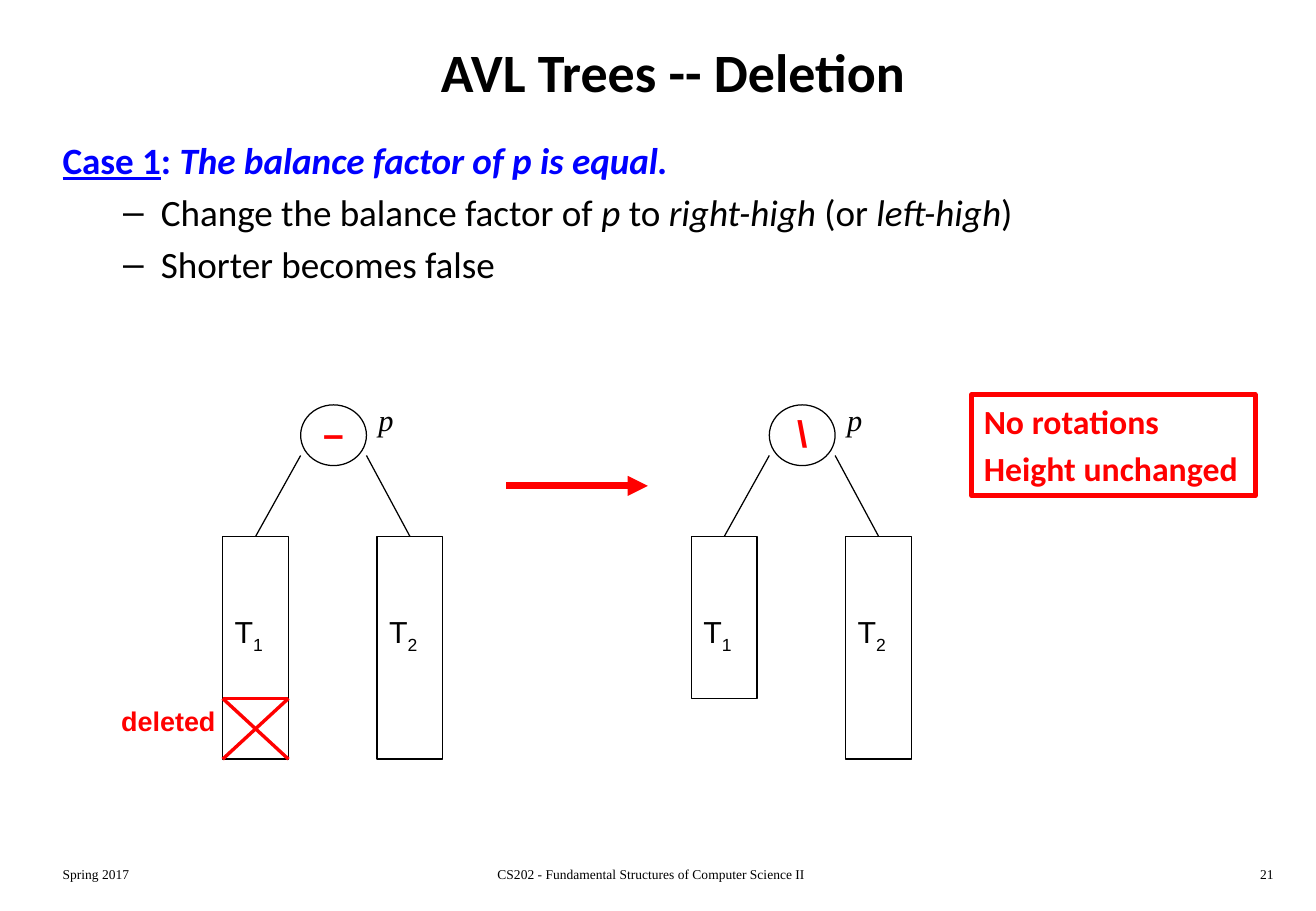
from lxml import etree
from pptx import Presentation
from pptx import util as u
from pptx.dml.color import RGBColor
from pptx.enum import shapes, text
from pptx.oxml import ns

BLACK = RGBColor(0, 0, 0)
RED = RGBColor(255, 0, 0)
BLUE = RGBColor(0, 0, 255)
COLUMNS, ROWS = 130, 90
NODE_WIDTH = 6.5
ROOT_OFFSET, RIGHT_OFFSET = 7.7, 15.25
TREE_TOP, LEAF_TOP = 40, 53


def cells(*counts):
    return [u.Inches(count / 12) for count in counts]


def style(font, size, name, color, bold=False, italic=False):
    font.size, font.name = u.Pt(size), name
    font.color.rgb = color
    font.bold, font.italic = bold, italic


def add_text(page, place, words, size, name, color=BLACK,
             align=text.PP_ALIGN.LEFT, **emphasis):
    frame = page.shapes.add_textbox(*cells(*place)).text_frame
    frame.word_wrap = True
    para = frame.paragraphs[0]
    para.text = words
    para.alignment = align
    style(para.font, size, name, color, **emphasis)
    return para


def add_outline(page, kind, place, color=BLACK, width=0.75):
    box = page.shapes.add_shape(kind, *cells(*place))
    box.shadow.inherit = False
    box.fill.background()
    box.line.color.rgb = color
    box.line.width = u.Pt(width)
    return box


def add_line(page, start, end, color=BLACK, width=0.75, arrow=False):
    line = page.shapes.add_connector(
        shapes.MSO_CONNECTOR.STRAIGHT, *cells(*start, *end))
    line.line.color.rgb = color
    line.line.width = u.Pt(width)
    if arrow:
        etree.SubElement(line.line._get_or_add_ln(), ns.qn("a:tailEnd"), type="triangle")
    etree.SubElement(line._element.spPr, ns.qn("a:effectLst"))


def add_bullet(para):
    props = para._p.get_or_add_pPr()
    props.set("marL", str(u.Inches(0.81)))
    props.set("indent", str(u.Inches(-0.31)))
    etree.SubElement(props, ns.qn("a:buFont"), typeface="Arial")
    etree.SubElement(props, ns.qn("a:buChar"), char="–")


def add_title(page):
    title = page.shapes.title
    title.left, title.top, title.width, title.height = cells(5, 2, 123, 10)
    title.text_frame.text = "AVL Trees -- Deletion"
    title.text_frame.vertical_anchor = text.MSO_ANCHOR.MIDDLE
    para = title.text_frame.paragraphs[0]
    para.alignment = text.PP_ALIGN.CENTER
    style(para.font, 32, "Calibri", BLACK, bold=True)


def add_case(page):
    heading = add_text(page, (5, 13, 109, 19), "", 22, "Calibri", BLUE, bold=True)
    heading.space_before = u.Pt(4.4)
    for words, underline, italic in (
            ("Case 1", True, False), (": ", False, False),
            ("The balance factor of p is equal.", False, True)):
        span = heading.add_run()
        span.text = words
        span.font.underline, span.font.italic = underline, italic
    frame = page.shapes[-1].text_frame
    for pieces in (
            ("Change the balance factor of ", "p", " to ", "right-high",
             " (or ", "left-high", ")"),
            ("Shorter becomes false",)):
        para = frame.add_paragraph()
        para.level = 1
        para.space_before = u.Pt(4.4)
        style(para.font, 22, "Calibri", BLACK)
        add_bullet(para)
        for index, words in enumerate(pieces):
            span = para.add_run()
            span.text = words
            span.font.italic = index % 2 == 1


def add_subtree(page, left, height, number, root_edge):
    add_outline(page, shapes.MSO_SHAPE.RECTANGLE, (left, LEAF_TOP, NODE_WIDTH, height))
    add_line(page, (root_edge, 45), (left + NODE_WIDTH / 2, LEAF_TOP))
    para = add_text(page, (left, 60, NODE_WIDTH, 4.8), "T", 18, "Arial")
    span = para.add_run()
    span.text = number
    span.font._element.set("baseline", "-25000")


def add_tree(page, left, left_height, symbol, symbol_offset):
    root = left + ROOT_OFFSET
    add_outline(page, shapes.MSO_SHAPE.OVAL, (root, TREE_TOP, NODE_WIDTH, 6))
    add_text(page, (left + symbol_offset, TREE_TOP, 5.4, 5.6), symbol, 22, "Arial",
             RED, bold=True)
    add_text(page, (root + NODE_WIDTH, 39, 7.5, 4.8), "p", 18, "Times New Roman",
             italic=True)
    add_subtree(page, left, left_height, "1", root)
    add_subtree(page, left + RIGHT_OFFSET, 22, "2", root + NODE_WIDTH)


def add_deleted_mark(page, left):
    right, top, bottom = left + NODE_WIDTH, 69, 75
    for start, end in (((left, top), (right, top)),
                       ((left, top), (right, bottom)),
                       ((right, top), (left, bottom))):
        add_line(page, start, end, RED, 2)
    add_text(page, (10.8, top, 15.1, 4.4), "deleted", 16, "Arial", RED, bold=True)


def add_result(page):
    box = add_outline(page, shapes.MSO_SHAPE.RECTANGLE, (96, 39, 28, 10), RED, 3)
    frame = box.text_frame
    frame.word_wrap = True
    frame.vertical_anchor = text.MSO_ANCHOR.TOP
    frame.text = "No rotations\nHeight unchanged"
    for para in frame.paragraphs:
        para.alignment = text.PP_ALIGN.LEFT
        para.space_before = u.Pt(4)
        style(para.font, 20, "Calibri", RED, bold=True)


def add_footer(page):
    for left, width, words, align in (
            (5, 27, "Spring 2017", text.PP_ALIGN.LEFT),
            (40, 48.7, "CS202 - Fundamental Structures of Computer Science II",
             text.PP_ALIGN.CENTER),
            (100, 27, "21", text.PP_ALIGN.RIGHT)):
        add_text(page, (left, 85, width, 3), words, 8, "Times New Roman", align=align)


def main():
    deck = Presentation()
    deck.slide_width, deck.slide_height = cells(COLUMNS, ROWS)
    page = deck.slides.add_slide(deck.slide_layouts.get_by_name("Title Only"))
    add_title(page)
    add_case(page)
    add_footer(page)
    add_tree(page, 22, 22, "–", 8.75)
    add_deleted_mark(page, 22)
    add_tree(page, 68.3, 16, "\\", 9.25)
    add_line(page, (50, 48), (64, 48), RED, 4, arrow=True)
    add_result(page)
    deck.save("out.pptx")


if __name__ == "__main__":
    main()
